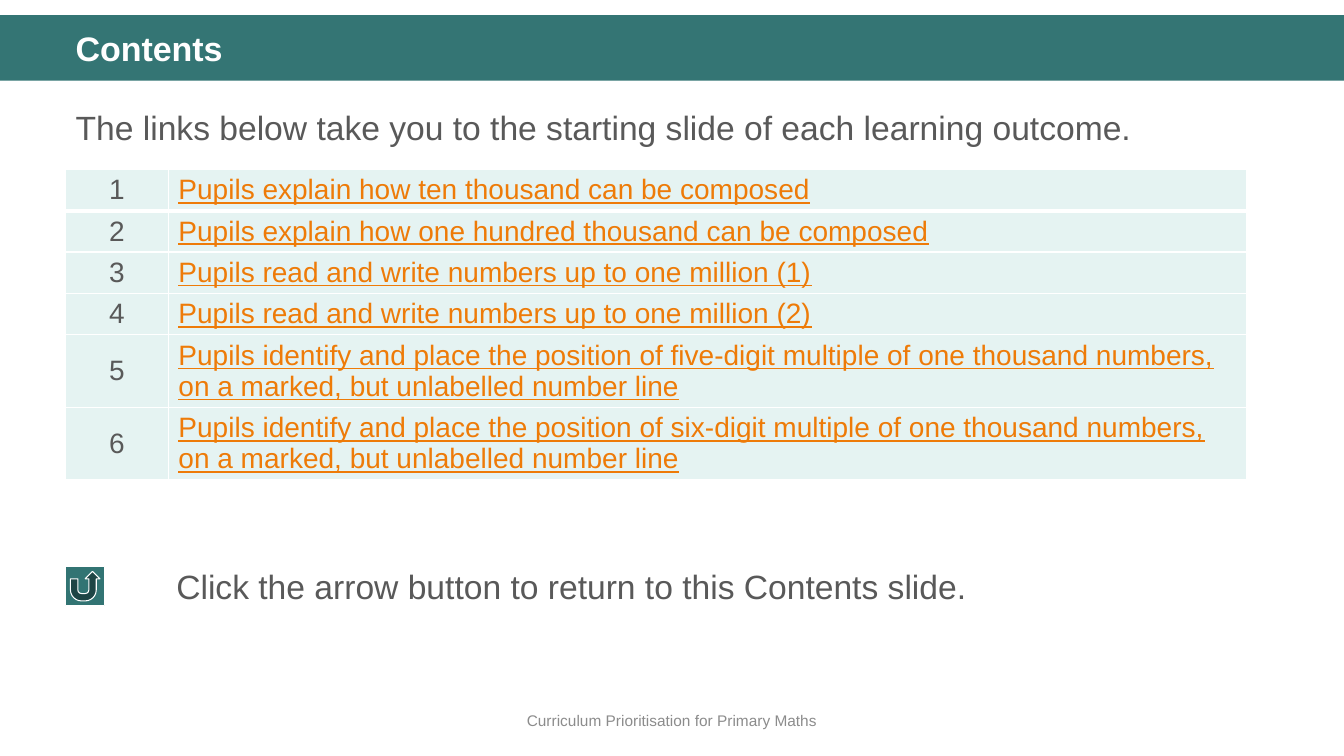
"""Build the Contents slide of a primary maths deck."""
import dataclasses

import pptx
import pptx.dml.color
import pptx.dml.fill
import pptx.enum.shapes
import pptx.enum.text
import pptx.oxml
import pptx.oxml.ns
import pptx.table
import pptx.text.text
import pptx.util

Inches = pptx.util.Inches
Pt = pptx.util.Pt
ALIGN = pptx.enum.text.PP_ALIGN
ANCHOR = pptx.enum.text.MSO_ANCHOR
FIT = pptx.enum.text.MSO_AUTO_SIZE
SHAPE = pptx.enum.shapes.MSO_SHAPE

WHITE = "FFFFFF"
TEAL = "347574"
GREY = "595959"
ORANGE = "EE7B08"
MINT = "E5F3F2"
SLIDE_W = 13.33
LEFT = 0.65


@dataclasses.dataclass
class Box:
    left: float
    top: float
    width: float
    height: float

    def lengths(self) -> list[int]:
        return [Inches(v) for v in dataclasses.astuple(self)]


@dataclasses.dataclass
class Style:
    size: float
    color: str = GREY
    bold: bool = False
    underline: bool = False
    align: ALIGN = ALIGN.LEFT


@dataclasses.dataclass
class Outcome:
    number: int
    text: str


NUMBER = Style(20, align=ALIGN.CENTER)
LINK = Style(20, ORANGE, underline=True)
PLACING = (
    "Pupils identify and place the position of {}-digit multiple of one "
    "thousand numbers, on a marked, but unlabelled number line"
)
OUTCOMES = [
    Outcome(i, text)
    for i, text in enumerate(
        [
            "Pupils explain how ten thousand can be composed",
            "Pupils explain how one hundred thousand can be composed",
            "Pupils read and write numbers up to one million (1)",
            "Pupils read and write numbers up to one million (2)",
            PLACING.format("five"),
            PLACING.format("six"),
        ],
        start=1,
    )
]


def rgb(color: str) -> pptx.dml.color.RGBColor:
    return pptx.dml.color.RGBColor.from_string(color)


def paint(fill: pptx.dml.fill.FillFormat, color: str) -> None:
    fill.solid()
    fill.fore_color.rgb = rgb(color)


def write(tf: pptx.text.text.TextFrame, text: str, style: Style) -> pptx.text.text._Paragraph:
    tf.word_wrap = True
    p = tf.paragraphs[0]
    p.alignment = style.align
    r = p.add_run()
    r.text = text
    r.font.name = "Arial"
    r.font.size = Pt(style.size)
    r.font.bold = style.bold
    r.font.underline = style.underline
    r.font.color.rgb = rgb(style.color)
    return p


def place(sp, box: Box) -> None:
    sp.left, sp.top, sp.width, sp.height = box.lengths()


def add_block(slide, kind: SHAPE, box: Box, color: str):
    sp = slide.shapes.add_shape(kind, *box.lengths())
    sp.shadow.inherit = False
    paint(sp.fill, color)
    return sp


def add_label(slide, box: Box, text: str, style: Style) -> pptx.text.text.TextFrame:
    tf = slide.shapes.add_textbox(*box.lengths()).text_frame
    write(tf, text, style)
    return tf


def set_borders(cell: pptx.table._Cell, bottom: float) -> None:
    tc_pr = cell._tc.get_or_add_tcPr()
    for i, (side, width) in enumerate(zip("LRTB", (1, 1, 1, bottom))):
        ln = pptx.oxml.parse_xml(
            f'<a:ln{side} {pptx.oxml.ns.nsdecls("a")} w="{Pt(width)}">'
            f'<a:solidFill><a:srgbClr val="{WHITE}"/></a:solidFill></a:ln{side}>'
        )
        tc_pr.insert(i, ln)


def add_outcomes(slide, box: Box, outcomes: list[Outcome]) -> None:
    frame = slide.shapes.add_table(len(outcomes), 2, *box.lengths())
    table = frame.table
    table.first_row = table.horz_banding = False
    for column, width in zip(table.columns, (1.02, 10.69)):
        column.width = Inches(width)
    for i, outcome in enumerate(outcomes):
        table.rows[i].height = Inches(0.41)
        contents = ((str(outcome.number), NUMBER), (outcome.text, LINK))
        for cell, (text, style) in zip(table.rows[i].cells, contents):
            cell.vertical_anchor = ANCHOR.MIDDLE
            paint(cell.fill, MINT)
            set_borders(cell, 3 if i == 0 else 1)
            write(cell.text_frame, text, style)


def main() -> None:
    prs = pptx.Presentation()
    prs.slide_width, prs.slide_height = Inches(SLIDE_W), Inches(7.5)
    slide = prs.slides.add_slide(prs.slide_layouts[1])

    band = add_block(slide, SHAPE.RECTANGLE, Box(0, 0.15, SLIDE_W, 0.65), TEAL)
    band.line.fill.background()
    slide.shapes._spTree.insert(2, band._element)

    title, body = slide.placeholders
    place(title, Box(LEFT, 0.27, 12.18, 0.47))
    tf = title.text_frame
    tf.auto_size = FIT.NONE
    tf.vertical_anchor = ANCHOR.MIDDLE
    write(tf, "Contents", Style(24.3, WHITE, bold=True)).line_spacing = 0.9

    place(body, Box(LEFT, 0.93, 12.18, 3.51))
    tf = body.text_frame
    tf.auto_size = FIT.NONE
    p = write(tf, "The links below take you to the starting slide of each learning outcome.", Style(24))
    p.line_spacing = 1.2
    p.space_before = Pt(10)
    p_pr = p._p.get_or_add_pPr()
    p_pr.set("marL", "0")
    p_pr.set("indent", "0")
    p_pr.append(pptx.oxml.parse_xml(f'<a:buNone {pptx.oxml.ns.nsdecls("a")}/>'))

    add_outcomes(slide, Box(LEFT, 1.68, 11.71, 2.46), OUTCOMES)

    button = add_block(slide, SHAPE.ACTION_BUTTON_RETURN, Box(LEFT, 5.62, 0.39, 0.39), "327473")
    button.line.color.rgb = rgb(WHITE)
    button.line.width = Pt(0.75)
    tf = add_label(
        slide, Box(1.65, 5.57, 11.32, 0.5),
        "Click the arrow button to return to this Contents slide.", Style(24),
    )
    tf.auto_size = FIT.SHAPE_TO_FIT_TEXT

    tf = add_label(
        slide, Box(0, 6.95, SLIDE_W, 0.4),
        "Curriculum Prioritisation for Primary Maths", Style(11, "8C8C8C", align=ALIGN.CENTER),
    )
    tf.vertical_anchor = ANCHOR.MIDDLE

    prs.save("out.pptx")


if __name__ == "__main__":
    main()
